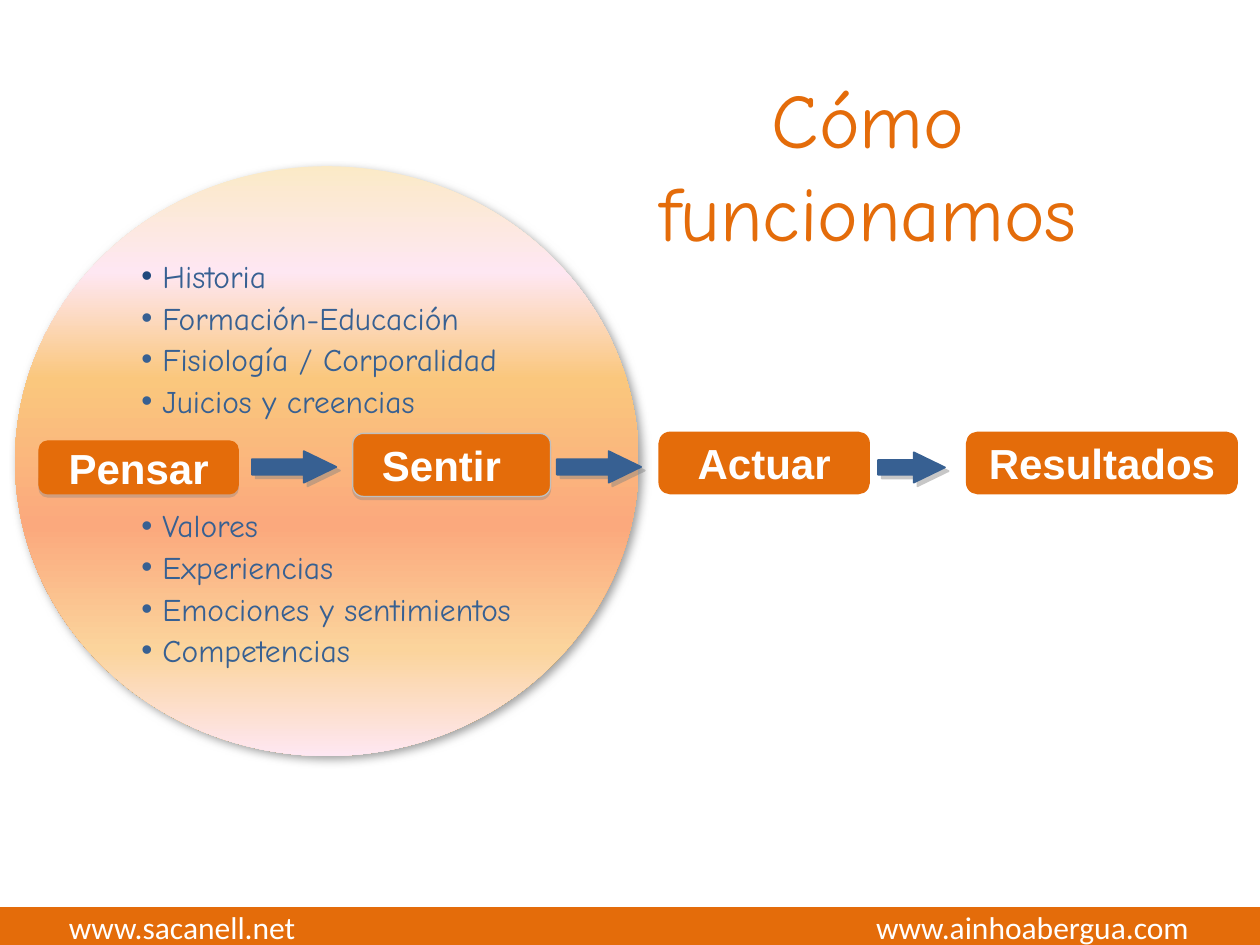
from dataclasses import dataclass
from typing import Optional

from lxml.etree import SubElement
from pptx import Presentation
from pptx.dml.color import RGBColor
from pptx.enum.shapes import MSO_SHAPE
from pptx.enum.text import MSO_ANCHOR, MSO_AUTO_SIZE, PP_ALIGN
from pptx.oxml.ns import qn
from pptx.util import Pt

ORANGE = RGBColor(0xE4, 0x6C, 0x0A)
BLUE = RGBColor(0x37, 0x60, 0x92)
NAVY = RGBColor(0x1F, 0x49, 0x7D)
SILVER = RGBColor(0xBF, 0xBF, 0xBF)
GRAY = RGBColor(0x80, 0x80, 0x80)
DIM_GRAY = RGBColor(0x7F, 0x7F, 0x7F)
WHITE = RGBColor(0xFF, 0xFF, 0xFF)

GLOW = (
    (0, RGBColor(0xFB, 0xEA, 0xC7)),
    (18, RGBColor(0xFE, 0xE7, 0xF2)),
    (36, RGBColor(0xFA, 0xC7, 0x7D)),
    (61, RGBColor(0xFB, 0xA9, 0x7D)),
    (82, RGBColor(0xFB, 0xD4, 0x9C)),
    (100, RGBColor(0xFE, 0xE7, 0xF2)),
)
BEFORE_FEELING = ("Historia", "Formación-Educación", "Fisiología / Corporalidad", "Juicios y creencias")
BEHIND_FEELING = ("Valores", "Experiencias", "Emociones y sentimientos", "Competencias")


@dataclass(frozen=True)
class Shadow:
    color: RGBColor
    opacity: int
    blur: float
    distance: float
    angle: int


@dataclass(frozen=True)
class Area:
    left: float
    top: float
    width: float
    height: float


@dataclass(frozen=True)
class Step:
    label: str
    area: Area
    outline: RGBColor = ORANGE
    outline_width: float = 0.75
    shadow: Optional[Shadow] = None
    right_inset: float = 7.2


SOFT = Shadow(DIM_GRAY, 75, 5, 3, 45)
BELOW = Shadow(GRAY, 35, 0, 1.8, 90)
DIAGONAL = Shadow(GRAY, 43, 0, 3, 45)

STEPS = (
    Step("Pensar", Area(22.3, 252, 113.8, 30.2), shadow=BELOW),
    Step("Sentir", Area(201.6, 247.7, 113, 36), SILVER, shadow=BELOW, right_inset=18.7),
    Step("Actuar", Area(377.3, 247.7, 118.8, 33.8), outline_width=2),
    Step("Resultados", Area(553, 247.7, 153.4, 33.8), outline_width=2),
)
ARROWS = (
    Area(144, 257.8, 48.2, 18),
    Area(318.2, 257.8, 48.2, 18),
    Area(501.8, 258.5, 38.2, 17.3),
)


def place(shape, area: Area) -> None:
    shape.left, shape.top = Pt(area.left), Pt(area.top)
    shape.width, shape.height = Pt(area.width), Pt(area.height)


def add_figure(slide, kind: MSO_SHAPE, area: Area, shadow: Optional[Shadow] = None):
    figure = slide.shapes.add_shape(kind, 0, 0, 0, 0)
    place(figure, area)
    figure.shadow.inherit = False
    if shadow:
        effects = figure._element.spPr.find(qn("a:effectLst"))
        outer = SubElement(
            effects, qn("a:outerShdw"), blurRad=str(Pt(shadow.blur)),
            dist=str(Pt(shadow.distance)), dir=str(shadow.angle * 60000),
            algn="ctr", rotWithShape="0")
        add_color(outer, shadow.color, shadow.opacity)
    return figure


def add_color(parent, color: RGBColor, opacity: int = 100) -> None:
    tint = SubElement(parent, qn("a:srgbClr"), val=str(color))
    if opacity < 100:
        SubElement(tint, qn("a:alpha"), val=str(opacity * 1000))


def paint(figure, fill: RGBColor, outline: RGBColor, width: float) -> None:
    figure.fill.solid()
    figure.fill.fore_color.rgb = fill
    figure.line.color.rgb = outline
    figure.line.width = Pt(width)


def set_font(paragraph, name: str, size: float, color: RGBColor, bold: bool = False) -> None:
    font = paragraph.font
    font.name, font.size, font.bold = name, Pt(size), bold
    font.color.rgb = color


def add_title(slide) -> None:
    title = slide.shapes.title
    place(title, Area(320.4, 37.4, 351.4, 113.8))
    frame = title.text_frame
    frame.text = "Cómo funcionamos"
    frame.word_wrap = True
    frame.auto_size = MSO_AUTO_SIZE.NONE
    frame.vertical_anchor = MSO_ANCHOR.TOP
    heading = frame.paragraphs[0]
    heading.alignment = PP_ALIGN.CENTER
    set_font(heading, "Comic Neue", 44, ORANGE)


def add_influences(slide) -> None:
    circle = add_figure(slide, MSO_SHAPE.OVAL, Area(8.6, 95, 356.4, 337), SOFT)
    circle.fill.gradient()
    circle.fill.gradient_angle = 270
    circle.line.fill.background()
    stops = circle._element.spPr.find(qn("a:gradFill")).find(qn("a:gsLst"))
    for stop in list(stops):
        stops.remove(stop)
    for position, color in GLOW:
        add_color(SubElement(stops, qn("a:gs"), pos=str(position * 1000)), color)

    frame = circle.text_frame
    frame.word_wrap = True
    frame.vertical_anchor = MSO_ANCHOR.MIDDLE
    frame.margin_left = Pt(20)
    frame.margin_right = frame.margin_top = frame.margin_bottom = 0
    for index, influence in enumerate(BEFORE_FEELING + BEHIND_FEELING):
        item = frame.add_paragraph() if index else frame.paragraphs[0]
        item.text = influence
        properties = item._p.get_or_add_pPr()
        properties.set("marL", str(Pt(12)))
        properties.set("indent", str(Pt(-12)))
        add_color(SubElement(properties, qn("a:buClr")), BLUE if index else NAVY)
        SubElement(properties, qn("a:buFont"), typeface="Arial")
        SubElement(properties, qn("a:buChar"), char="•")
        item.alignment = PP_ALIGN.LEFT
        item.line_spacing = 1.1
        if index == len(BEFORE_FEELING):
            item.space_before = Pt(47.5)
        set_font(item, "Comic Neue", 18, BLUE)


def add_step(slide, step: Step) -> None:
    box = add_figure(slide, MSO_SHAPE.ROUNDED_RECTANGLE, step.area, step.shadow)
    paint(box, ORANGE, step.outline, step.outline_width)
    frame = box.text_frame
    frame.text = step.label
    frame.word_wrap = True
    frame.vertical_anchor = MSO_ANCHOR.MIDDLE
    frame.margin_right = Pt(step.right_inset)
    label = frame.paragraphs[0]
    label.alignment = PP_ALIGN.CENTER
    set_font(label, "Arial", 24, WHITE, bold=True)


def add_arrow(slide, area: Area) -> None:
    arrow = add_figure(slide, MSO_SHAPE.RIGHT_ARROW, area, DIAGONAL)
    arrow.adjustments[0], arrow.adjustments[1] = 0.49, 1.03
    paint(arrow, BLUE, BLUE, 1)


def add_footer(slide) -> None:
    footer = add_figure(slide, MSO_SHAPE.RECTANGLE, Area(0, 519.1, 720, 20.9))
    paint(footer, ORANGE, ORANGE, 2)
    frame = footer.text_frame
    frame.text = "www.sacanell.net\twww.ainhoabergua.com"
    frame.word_wrap = True
    frame.vertical_anchor = MSO_ANCHOR.MIDDLE
    frame.margin_left = Pt(39.4)
    sites = frame.paragraphs[0]
    tabs = SubElement(sites._p.get_or_add_pPr(), qn("a:tabLst"))
    SubElement(tabs, qn("a:tab"), pos=str(Pt(640)), algn="r")
    sites.alignment = PP_ALIGN.LEFT
    set_font(sites, "Calibri", 18, WHITE)


def main() -> None:
    deck = Presentation()
    deck.slide_width, deck.slide_height = Pt(720), Pt(540)
    slide = deck.slides.add_slide(deck.slide_layouts[5])
    add_influences(slide)
    for step in STEPS:
        add_step(slide, step)
    for area in ARROWS:
        add_arrow(slide, area)
    add_title(slide)
    add_footer(slide)
    deck.save("out.pptx")


if __name__ == "__main__":
    main()
